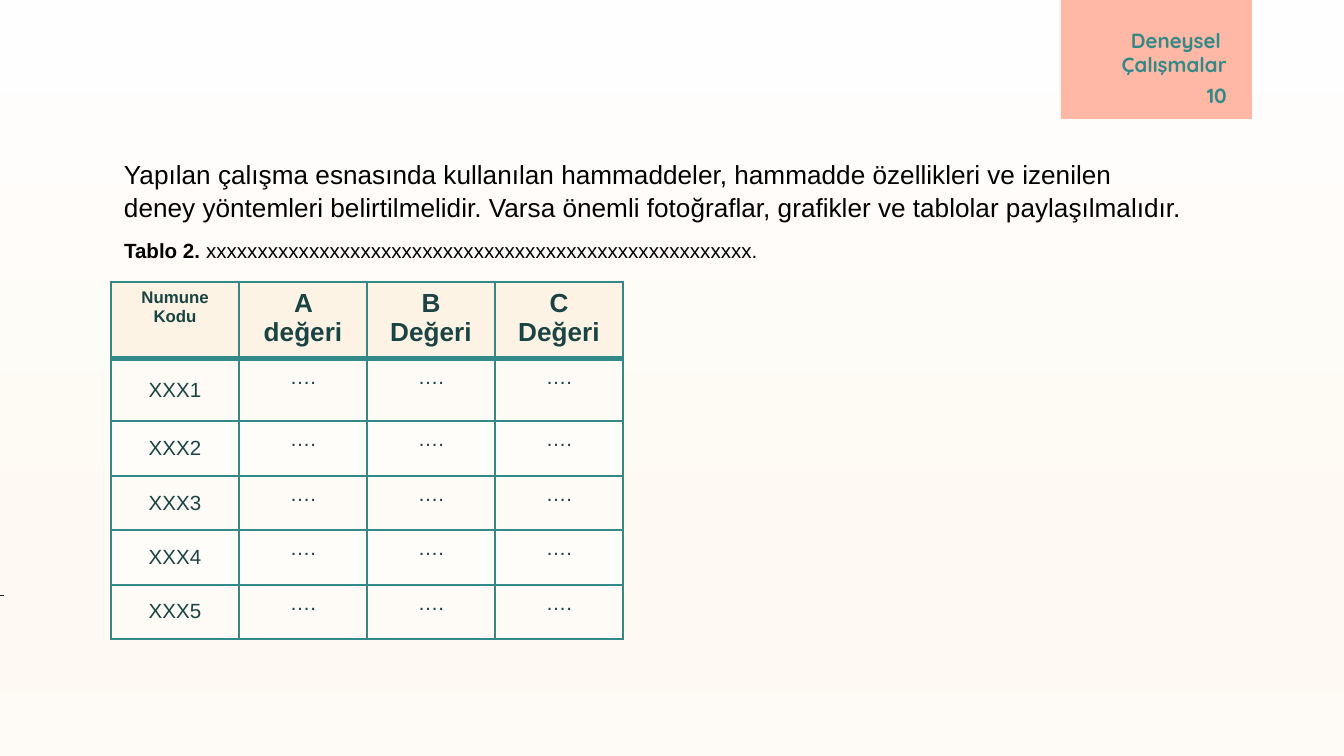
from lxml.etree import SubElement
from pptx import Presentation
from pptx.dml.color import RGBColor
from pptx.enum.shapes import MSO_CONNECTOR as CONNECTOR, MSO_SHAPE as SHAPE
from pptx.enum.text import MSO_ANCHOR as ANCHOR, MSO_AUTO_SIZE as AUTO_SIZE, PP_ALIGN as ALIGN
from pptx.oxml.ns import qn
from pptx.util import Pt

EMU_PER_PX = 914400 / 134.4
TITLE_ONLY = 5


def px(length):
    return round(length * EMU_PER_PX)


def color(value):
    return RGBColor.from_string(value)


class SlideBuilder:
    TEAL, DARK_TEAL, CORAL = "338987", "1A4444", "FFB8A5"
    HEADER, BANDS = "FDF3E5", ("FEFAF5", "FFFDFA")
    BLACK, CHARCOAL = "000000", "1F1F1F"
    BODY_FONT, TITLE_FONT = "Arial", "Quicksand"

    def __init__(self, slide):
        self.slide = slide
        self.shapes = slide.shapes

    def background(self, stops):
        fill = self.slide.background.fill
        fill.gradient()
        fill.gradient_angle = 270
        stop_list = next(self.slide.element.iter(qn("a:gsLst")))
        for stop in list(stop_list):
            stop_list.remove(stop)
        for percent, value in stops:
            stop = SubElement(stop_list, qn("a:gs"), pos=str(percent * 1000))
            SubElement(stop, qn("a:srgbClr"), val=value)

    def rectangle(self, left, top, width, height, fill):
        shape = self.shapes.add_shape(SHAPE.RECTANGLE, px(left), px(top), px(width), px(height))
        shape.shadow.inherit = False
        shape.fill.solid()
        shape.fill.fore_color.rgb = color(fill)
        shape.line.fill.background()

    def line(self, x1, y1, x2, y2, stroke, width):
        connector = self.shapes.add_connector(CONNECTOR.STRAIGHT, px(x1), px(y1), px(x2), px(y2))
        connector.line.color.rgb = color(stroke)
        connector.line.width = Pt(width)
        SubElement(connector.element.spPr, qn("a:effectLst"))

    def format_text(self, paragraph, size, fill, font=BODY_FONT, bold=False, align=ALIGN.LEFT):
        paragraph.alignment = align
        for run in paragraph.runs:
            run.font.size = Pt(size)
            run.font.name = font
            run.font.bold = bold
            run.font.color.rgb = color(fill)

    def frame(self, shape, inset_x, inset_y, anchor=ANCHOR.TOP):
        text_frame = shape.text_frame
        text_frame.word_wrap = True
        text_frame.auto_size = AUTO_SIZE.NONE
        text_frame.vertical_anchor = anchor
        text_frame.margin_left = text_frame.margin_right = px(inset_x)
        text_frame.margin_top = text_frame.margin_bottom = px(inset_y)
        return text_frame

    def tab_text(self, shape, text, anchor):
        text_frame = self.frame(shape, 13, 13, anchor)
        text_frame.text = text
        self.format_text(text_frame.paragraphs[0], 11, self.TEAL, self.TITLE_FONT, True, ALIGN.RIGHT)

    def title(self, text, left, top, width, height):
        shape = self.shapes.title
        shape.left, shape.top, shape.width, shape.height = map(px, (left, top, width, height))
        self.tab_text(shape, text, ANCHOR.BOTTOM)
        # Stack the title above the shapes drawn so far
        shape.element.getparent().append(shape.element)

    def page_number(self, text, left, top, width, height):
        box = self.shapes.add_textbox(px(left), px(top), px(width), px(height))
        self.tab_text(box, text, ANCHOR.TOP)

    def body_text(self, text, left, top, width, height, size, label=""):
        box = self.shapes.add_textbox(px(left), px(top), px(width), px(height))
        paragraph = self.frame(box, 13, 7).paragraphs[0]
        paragraph.line_spacing = 1.05
        for part in filter(None, (label, text)):
            paragraph.add_run().text = part
        self.format_text(paragraph, size, self.BLACK)
        if label:
            paragraph.runs[0].font.bold = True

    def cell_borders(self, cell, top, bottom):
        properties = cell._tc.get_or_add_tcPr()
        widths = {"a:lnL": 1, "a:lnR": 1, "a:lnT": top, "a:lnB": bottom}
        for index, (tag, width) in enumerate(widths.items()):
            border = SubElement(properties, qn(tag), w=str(Pt(width)))
            fill = SubElement(border, qn("a:solidFill"))
            SubElement(fill, qn("a:srgbClr"), val=self.TEAL)
            properties.insert(index, border)

    def table(self, rows, left, top, column_width, row_heights):
        column_count = len(rows[0])
        table = self.shapes.add_table(
            len(rows), column_count, px(left), px(top),
            px(column_width * column_count), px(sum(row_heights))).table
        for column in table.columns:
            column.width = px(column_width)
        for row_index, values in enumerate(rows):
            table.rows[row_index].height = px(row_heights[row_index])
            header = row_index == 0
            for column_index, value in enumerate(values):
                first = column_index == 0
                cell = table.cell(row_index, column_index)
                cell.text = value
                cell.vertical_anchor = ANCHOR.MIDDLE if first and not header else ANCHOR.TOP
                size = (9 if first else 14) if header else 11
                self.format_text(cell.text_frame.paragraphs[0], size, self.DARK_TEAL,
                                 bold=header, align=ALIGN.CENTER)
                cell.fill.solid()
                cell.fill.fore_color.rgb = color(self.HEADER if header else self.BANDS[(row_index - 1) % 2])
                self.cell_borders(cell, 3 if row_index == 1 else 1, 3 if header else 1)


def main():
    presentation = Presentation()
    presentation.slide_width, presentation.slide_height = px(1344), px(756)
    slide = presentation.slides.add_slide(presentation.slide_layouts[TITLE_ONLY])
    builder = SlideBuilder(slide)

    # Background and section tab
    builder.background([(0, "FFFEFE"), (74, "FEFAF3"), (83, "FEFAF3"), (100, "FEFBF7")])
    builder.rectangle(1061, 0, 191, 119, builder.CORAL)
    builder.page_number("10", 1160, 70, 80, 58)

    # Short edge mark
    builder.line(0, 595, 4, 595, builder.CHARCOAL, 0.3)

    # Section title
    builder.title("Deneysel \vÇalışmalar", 818, 19, 422, 71)

    # Introduction
    builder.body_text(
        "Yapılan çalışma esnasında kullanılan hammaddeler, hammadde özellikleri ve izenilen "
        "deney yöntemleri belirtilmelidir. Varsa önemli fotoğraflar, grafikler ve tablolar "
        "paylaşılmalıdır.", 111, 150, 1092, 77, 14)

    # Sample table and its caption
    header = ["Numune Kodu", "A değeri", "B Değeri", "C Değeri"]
    samples = [[f"XXX{number}"] + ["…."] * 3 for number in range(1, 6)]
    builder.table([header] + samples, 111, 282, 128, [77, 62, 55, 54, 55, 54])
    builder.body_text("x" * 53 + ".", 111, 230, 1043, 39, 11, label="Tablo 2. ")

    presentation.save("out.pptx")


if __name__ == "__main__":
    main()
